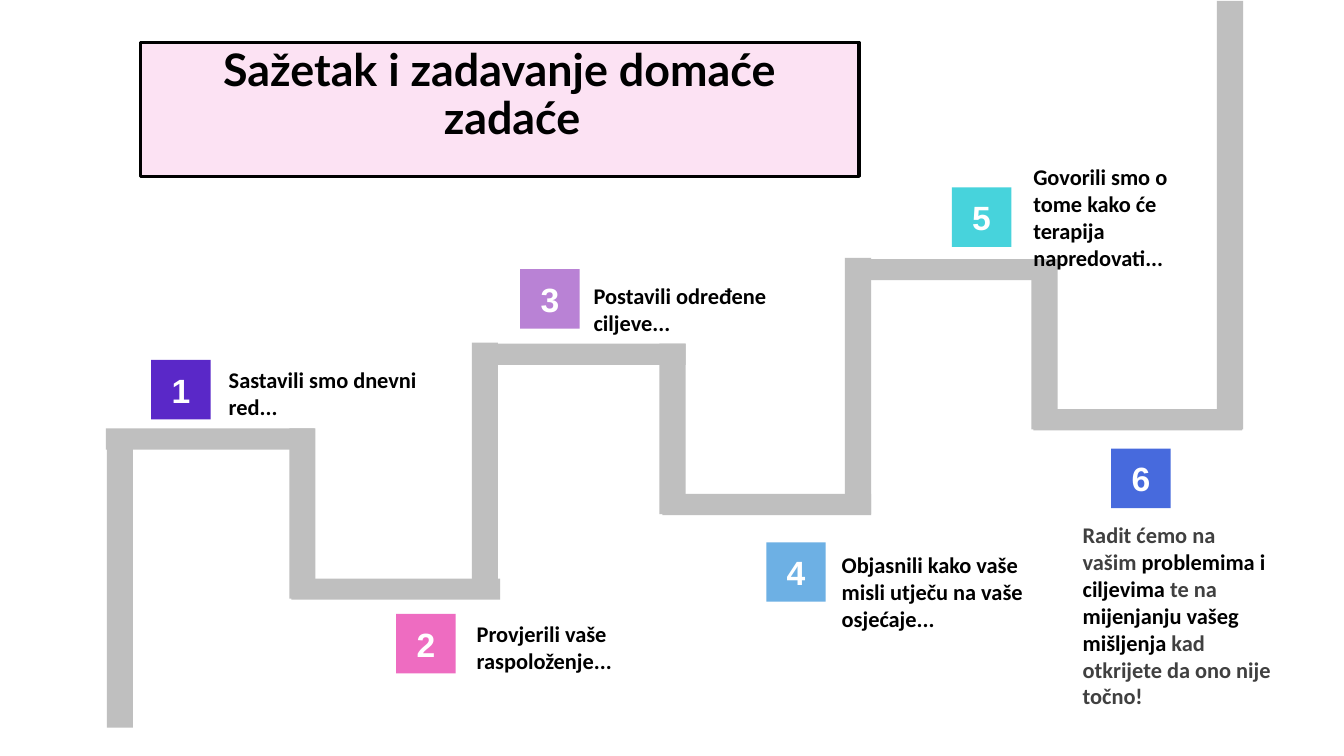
from pptx import Presentation
from pptx.dml.color import RGBColor
from pptx.enum.shapes import MSO_SHAPE
from pptx.enum.text import MSO_ANCHOR, MSO_AUTO_SIZE, PP_ALIGN
from pptx.util import Pt

PX = 9144
BLACK = RGBColor(0x00, 0x00, 0x00)
WHITE = RGBColor(0xFF, 0xFF, 0xFF)
DARK = RGBColor(0x40, 0x40, 0x40)
GREY = RGBColor(0xBF, 0xBF, 0xBF)
ROSE = RGBColor(0xFC, 0xE2, 0xF3)
INDIGO = RGBColor(0x5A, 0x28, 0xC8)
PINK = RGBColor(0xEE, 0x6C, 0xC1)
LILAC = RGBColor(0xB9, 0x82, 0xD5)
SKY = RGBColor(0x6D, 0xB0, 0xE4)
AQUA = RGBColor(0x47, 0xD3, 0xDC)
BLUE = RGBColor(0x47, 0x6A, 0xDD)

STEPS = [
    (INDIGO, (150, 357), (217, 358, 231, 64),
     [("Sastavili smo dnevni red...", BLACK)]),
    (PINK, (393, 609), (463, 610, 207, 64),
     [("Provjerili vaše raspoloženje...", BLACK)]),
    (LILAC, (516, 267), (579, 275, 207, 64),
     [("Postavili određene ciljeve...", BLACK)]),
    (SKY, (760, 538), (825, 542, 207, 91),
     [("Objasnili kako vaše misli utječu na vaše osjećaje...", BLACK)]),
    (AQUA, (944, 186), (1015, 157, 198, 91),
     [("Govorili smo o tome kako će terapija napredovati...", BLACK)]),
    (BLUE, (1102, 445), (1064, 511, 207, 199),
     [("Radit ćemo na vašim ", DARK), ("problemima i ciljevima ", BLACK),
      ("te na ", DARK), ("mijenjanju vašeg mišljenja", BLACK),
      (" kad otkrijete da ono nije točno!", DARK)]),
]


def scale(*sides):
    return [side * PX for side in sides]


def set_font(par, name, size, color=None):
    font = par.font
    font.name, font.size, font.bold = name, Pt(size), True
    if color is not None:
        font.color.rgb = color


def add_block(shapes, box, color):
    block = shapes.add_shape(MSO_SHAPE.RECTANGLE, *scale(*box))
    block.shadow.inherit = False
    block.fill.solid()
    block.fill.fore_color.rgb = color
    block.line.fill.background()
    return block


def add_stairs(slide):
    stairs = slide.shapes.add_group_shape().shapes
    for i in range(6):
        top = (574 if i % 2 else 425) - 84 * (i // 2)
        add_block(stairs, (105 + 184 * i, top, 207, 21), GREY)
    falls = [(x, 425 - 84 * i, 26, 169) for i, x in enumerate((287, 654, 1023))]
    climbs = [(x, 340 - 84 * i, 26, 254) for i, x in enumerate((468, 838))]
    ends = [(106, 427, 26, 295), (1207, 1, 26, 425)]
    for box in falls + climbs + ends:
        add_block(stairs, box, GREY)


def add_badge(slide, number, spot, color):
    frame = add_block(slide.shapes, (*spot, 59, 59), color).text_frame
    frame.vertical_anchor = MSO_ANCHOR.MIDDLE
    par = frame.paragraphs[0]
    par.text = str(number)
    par.alignment = PP_ALIGN.CENTER
    set_font(par, "Arial", 24, WHITE)


def add_label(slide, box, parts):
    frame = slide.shapes.add_textbox(*scale(*box)).text_frame
    frame.word_wrap = True
    frame.auto_size = MSO_AUTO_SIZE.SHAPE_TO_FIT_TEXT
    if len(parts) > 1:
        frame.vertical_anchor = MSO_ANCHOR.MIDDLE
    par = frame.paragraphs[0]
    if len(parts) == 1:
        par.text, color = parts[0]
        set_font(par, "Calibri", 16, color)
        return
    set_font(par, "Calibri", 16)
    for text, color in parts:
        run = par.add_run()
        run.text = text
        run.font.color.rgb = color


def set_title(slide, text):
    title = slide.shapes.title
    title.left, title.top, title.width, title.height = scale(139, 42, 713, 133)
    title.fill.solid()
    title.fill.fore_color.rgb = ROSE
    title.line.color.rgb = BLACK
    title.line.width = Pt(2.25)
    frame = title.text_frame
    frame.word_wrap = True
    frame.auto_size = MSO_AUTO_SIZE.NONE
    frame.vertical_anchor = MSO_ANCHOR.TOP
    par = frame.paragraphs[0]
    par.text = text
    par.alignment = PP_ALIGN.CENTER
    par.line_spacing = 0.9
    indent = par._p.get_or_add_pPr()
    indent.set("marL", str(25 * PX))
    indent.set("indent", str(-25 * PX))
    set_font(par, "Lato", 32, BLACK)


def main():
    deck = Presentation()
    deck.slide_width, deck.slide_height = scale(1333, 750)
    slide = deck.slides.add_slide(deck.slide_layouts[5])
    set_title(slide, "Sažetak i zadavanje domaće zadaće")
    add_stairs(slide)
    for number, (color, spot, box, parts) in enumerate(STEPS, 1):
        add_badge(slide, number, spot, color)
        add_label(slide, box, parts)
    deck.save("out.pptx")


if __name__ == "__main__":
    main()
